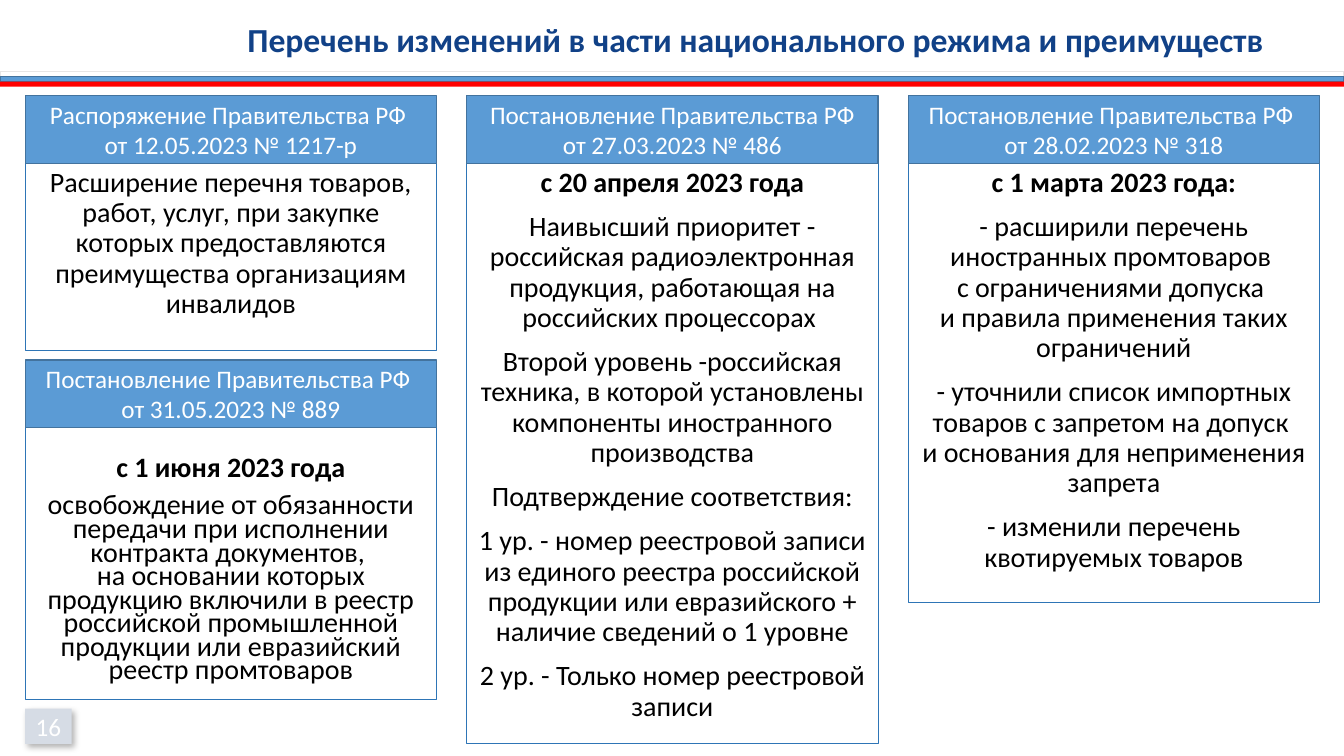
from dataclasses import dataclass

from lxml.etree import SubElement
from pptx import Presentation
from pptx.dml.color import RGBColor
from pptx.enum.shapes import MSO_SHAPE as Shape
from pptx.enum.text import MSO_ANCHOR as Anchor, MSO_AUTO_SIZE as AutoSize, PP_ALIGN as Align
from pptx.oxml.ns import qn
from pptx.util import Emu, Inches, Pt


@dataclass(frozen=True)
class Theme:
    font: str = "Calibri"
    title_size: int = 24
    body_size: int = 20
    head_size: int = 18
    title: str = "114187"
    text: str = "000000"
    white: str = "FFFFFF"
    blue: str = "5B9BD5"
    head_line: str = "43739E"
    body_line: str = "2E75B6"
    grey: str = "E7E6E6"
    red: str = "FF0000"
    badge: str = "D6DCE5"


@dataclass(frozen=True)
class Box:
    """Left, top, width and height in percent of the slide."""
    left: float
    top: float
    width: float
    height: float


@dataclass(frozen=True)
class Stripe:
    fill: str
    line: str | None


@dataclass(frozen=True)
class Card:
    col: int
    head_top: float
    body_top: float
    body_height: float
    heading: str
    date: str | None
    paragraphs: tuple[str, ...]
    spacing: float = 0.9
    inset: float = 0.05


T = Theme()
WIDTH, HEIGHT = Inches(13.33), Inches(7.5)

# Grid, in percent of the slide
MARGIN, COL_WIDTH, COL_STEP = 1.88, 30.6, 32.85
TOP_ROW, SECOND_ROW, HEAD_HEIGHT = 12.67, 47.6, 8.93
BODY_ROW = TOP_ROW + HEAD_HEIGHT
STRIPE_TOP, STRIPE_HEIGHT = 9.47, 0.67

STRIPES = (Stripe(T.white, T.grey), Stripe(T.blue, T.head_line), Stripe(T.red, None))

CARDS = (
    Card(0, TOP_ROW, BODY_ROW, 24.8,
         "Распоряжение Правительства РФ \nот 12.05.2023 № 1217-р", None,
         ("Расширение перечня товаров, работ, услуг, при закупке которых "
          "предоставляются преимущества организациям инвалидов",)),
    Card(0, SECOND_ROW, 54.93, 37.6,
         "Постановление Правительства РФ \nот 31.05.2023 № 889",
         "с 1 июня 2023 года",
         ("освобождение от обязанности передачи при исполнении контракта документов, \n"
          "на основании которых продукцию включили в реестр российской промышленной "
          "продукции или евразийский реестр промтоваров",),
         spacing=0.7, inset=0.43),
    Card(1, TOP_ROW, BODY_ROW, 76.8,
         "Постановление Правительства РФ от 27.03.2023 № 486",
         "с 20 апреля 2023 года",
         ("Наивысший приоритет - российская радиоэлектронная продукция, "
          "работающая на российских процессорах ",
          "Второй уровень -российская техника, в которой установлены "
          "компоненты иностранного производства",
          "Подтверждение соответствия:",
          "1 ур. - номер реестровой записи из единого реестра российской "
          "продукции или евразийского + наличие сведений о 1 уровне",
          "2 ур. - Только номер реестровой записи")),
    Card(2, TOP_ROW, BODY_ROW, 58.13,
         "Постановление Правительства РФ \nот 28.02.2023 № 318",
         "с 1 марта 2023 года:",
         ("- расширили перечень иностранных промтоваров \nс ограничениями допуска \n"
          "и правила применения таких ограничений",
          "- уточнили список импортных товаров с запретом на допуск \n"
          "и основания для неприменения запрета",
          "- изменили перечень квотируемых товаров")),
)


def place(box: Box) -> tuple[Emu, Emu, Emu, Emu]:
    return (Emu(round(WIDTH * box.left / 100)), Emu(round(HEIGHT * box.top / 100)),
            Emu(round(WIDTH * box.width / 100)), Emu(round(HEIGHT * box.height / 100)))


def add_rect(s, box: Box, fill: str | None, line: str | None, weight: float = 1):
    sp = s.shapes.add_shape(Shape.RECTANGLE, *place(box))
    sp.shadow.inherit = False
    if fill:
        sp.fill.solid()
        sp.fill.fore_color.rgb = RGBColor.from_string(fill)
    else:
        sp.fill.background()
    if line:
        sp.line.color.rgb = RGBColor.from_string(line)
        sp.line.width = Pt(weight)
    else:
        sp.line.fill.background()
    return sp


def write(p, text: str, size: int, color: str, bold: bool = False) -> None:
    p.text = text
    p.alignment = Align.CENTER
    p.font.name, p.font.size, p.font.bold = T.font, Pt(size), bold
    p.font.color.rgb = RGBColor.from_string(color)


def add_title(s, text: str) -> None:
    sp = s.shapes.title
    sp.left, sp.top, sp.width, sp.height = place(Box(16.35, 1.87, 79.73, 6.67))
    tf = sp.text_frame
    tf.auto_size, tf.vertical_anchor = AutoSize.NONE, Anchor.TOP
    write(tf.paragraphs[0], text, T.title_size, T.title, True)


def add_label(s, box: Box, text: str, fill: str, line: str | None):
    sp = add_rect(s, box, fill, line)
    sp.text_frame.vertical_anchor = Anchor.MIDDLE
    write(sp.text_frame.paragraphs[0], text, T.head_size, T.white)
    return sp


def add_card(s, card: Card) -> None:
    left = MARGIN + card.col * COL_STEP
    body = add_rect(s, Box(left, card.body_top, COL_WIDTH, card.body_height),
                    None, T.body_line, 0.75)
    tf = body.text_frame
    tf.vertical_anchor, tf.margin_top = Anchor.TOP, Inches(card.inset)
    lines = ((card.date,) if card.date else ()) + card.paragraphs
    for i, text in enumerate(lines):
        p = tf.add_paragraph() if i else tf.paragraphs[0]
        write(p, text, T.body_size, T.text, text == card.date)
        p.line_spacing, p.space_before = card.spacing, Pt(10)
    add_label(s, Box(left, card.head_top, COL_WIDTH, HEAD_HEIGHT),
              card.heading, T.blue, T.head_line)


def add_shadow(sp) -> None:
    effects = sp._element.spPr.find(qn("a:effectLst"))
    shadow = SubElement(effects, qn("a:outerShdw"), blurRad=str(Pt(4.5)),
                        dist=str(Pt(2.6)), dir=str(53 * 60000))
    color = SubElement(shadow, qn("a:srgbClr"), val=T.text)
    SubElement(color, qn("a:alpha"), val="30000")


def main() -> None:
    prs = Presentation()
    prs.slide_width, prs.slide_height = WIDTH, HEIGHT
    s = prs.slides.add_slide(prs.slide_layouts.get_by_name("Title Only"))

    # Title and the tricolour rule below it
    add_title(s, "Перечень изменений в части национального режима и преимуществ")
    for i, stripe in enumerate(STRIPES):
        add_rect(s, Box(0, STRIPE_TOP + i * STRIPE_HEIGHT, 100, STRIPE_HEIGHT),
                 stripe.fill, stripe.line)

    # Cards with the decrees
    for card in CARDS:
        add_card(s, card)

    # Page number
    add_shadow(add_label(s, Box(MARGIN, 93.73, 3.45, 4.67), "16", T.badge, None))

    prs.save("out.pptx")


if __name__ == "__main__":
    main()
